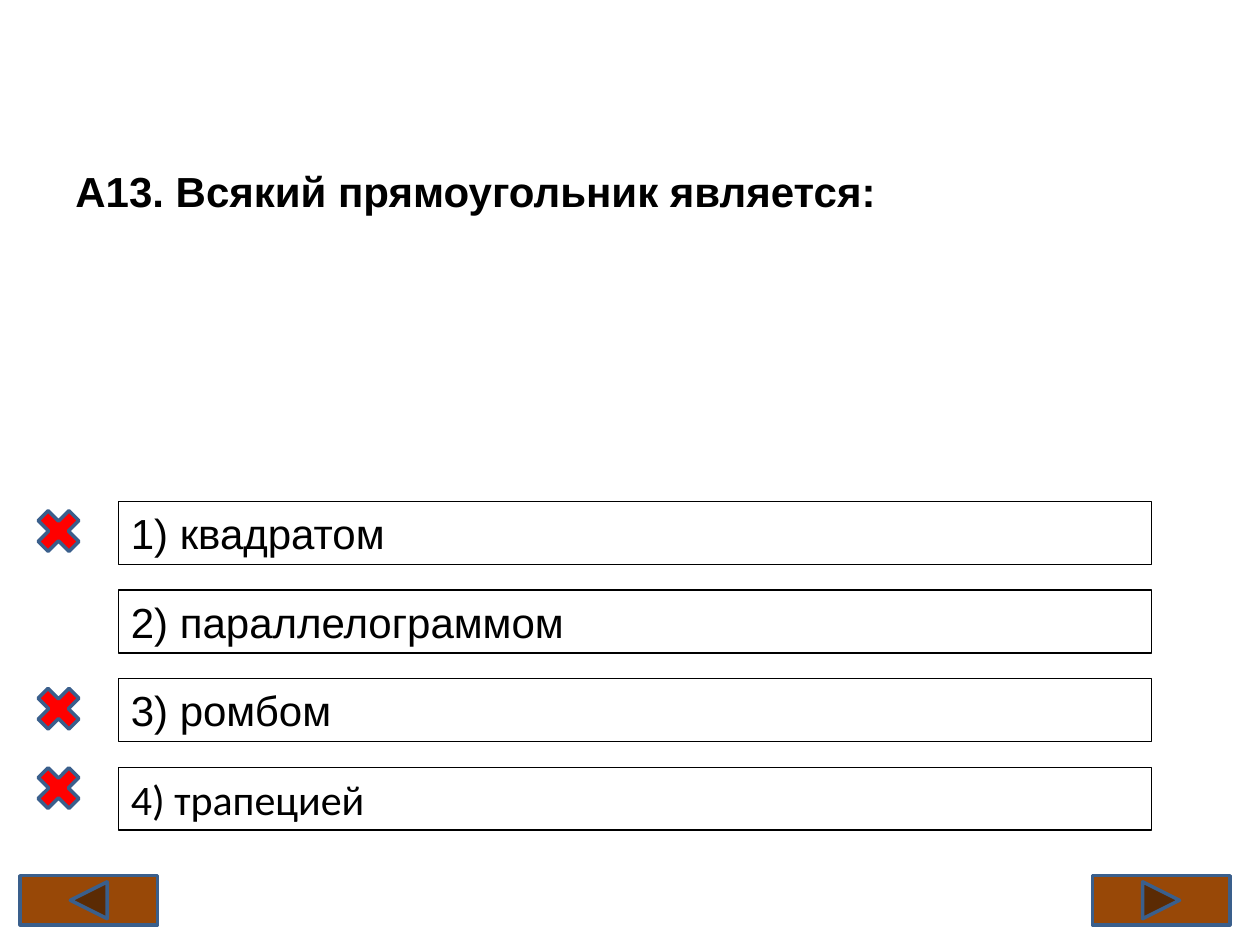
from pptx import Presentation
from pptx.dml.color import RGBColor
from pptx.enum.shapes import MSO_SHAPE
from pptx.enum.text import MSO_ANCHOR, PP_ALIGN
from pptx.util import Inches, Pt

RECTANGLE = MSO_SHAPE.RECTANGLE
CROSS = MSO_SHAPE.MATH_MULTIPLY
FORWARD = MSO_SHAPE.ACTION_BUTTON_FORWARD_OR_NEXT
BACK = MSO_SHAPE.ACTION_BUTTON_BACK_OR_PREVIOUS
TOP, MIDDLE = MSO_ANCHOR.TOP, MSO_ANCHOR.MIDDLE
LEFT, JUSTIFY = PP_ALIGN.LEFT, PP_ALIGN.JUSTIFY

COLORS = {"ink": "000000", "wrong": "FF0000", "button": "984807", "edge": "3A5F8C"}
CELL = Inches(0.1)
ANSWER_TOP, ANSWER_STEP = 39.8, 7.03
ANSWERS = [
    ("1) квадратом", "Arial"),
    ("2) параллелограммом", "Arial"),
    ("3) ромбом", "Arial"),
    ("4) трапецией", "Calibri"),
]
CROSS_ROWS = [39.8, 53.9, 60.2]


def color(name):
    return RGBColor.from_string(COLORS[name])


def write_text(box, text, font="Arial", size=24, bold=False, align=LEFT, anchor=TOP):
    frame = box.text_frame
    frame.word_wrap = True
    frame.vertical_anchor = anchor
    para = frame.paragraphs[0]
    para.alignment = align
    span = para.add_run()
    span.text = text
    span.font.name = font
    span.font.size = Pt(size)
    span.font.bold = bold
    span.font.color.rgb = color("ink")


class QuizPage:
    def __init__(self, deck):
        self.page = deck.slides.add_slide(deck.slide_layouts[6])

    def place(self, *cells):
        return [round(cell * CELL) for cell in cells]

    def title(self, text, *cells):
        box = self.page.shapes.add_textbox(*self.place(*cells))
        write_text(box, text, bold=True, align=JUSTIFY, anchor=MIDDLE)

    def shape(self, kind, *cells, fill=None, line="edge", width=2):
        shape = self.page.shapes.add_shape(kind, *self.place(*cells))
        shape.shadow.inherit = False
        if fill:
            shape.fill.solid()
            shape.fill.fore_color.rgb = color(fill)
        else:
            shape.fill.background()
        shape.line.color.rgb = color(line)
        shape.line.width = Pt(width)
        return shape

    def answer(self, row, text, font):
        box = self.shape(RECTANGLE, 9.4, row, 82, 5, line="ink", width=0.75)
        write_text(box, text, font=font)

    def cross(self, row):
        self.shape(CROSS, 2.3, row, 4.7, 4.7, fill="wrong")

    def button(self, kind, column):
        self.shape(kind, column, 69.5, 10.9, 3.9, fill="button")


def main():
    deck = Presentation()
    deck.slide_width, deck.slide_height = Inches(10), Inches(7.5)
    quiz = QuizPage(deck)
    quiz.title("А13. Всякий прямоугольник является:", 5, 3, 90, 24.3)
    for index, (text, font) in enumerate(ANSWERS):
        quiz.answer(ANSWER_TOP + index * ANSWER_STEP, text, font)
    for row in CROSS_ROWS:
        quiz.cross(row)
    quiz.button(FORWARD, 86.7)
    quiz.button(BACK, 1.6)
    deck.save("out.pptx")


if __name__ == "__main__":
    main()
